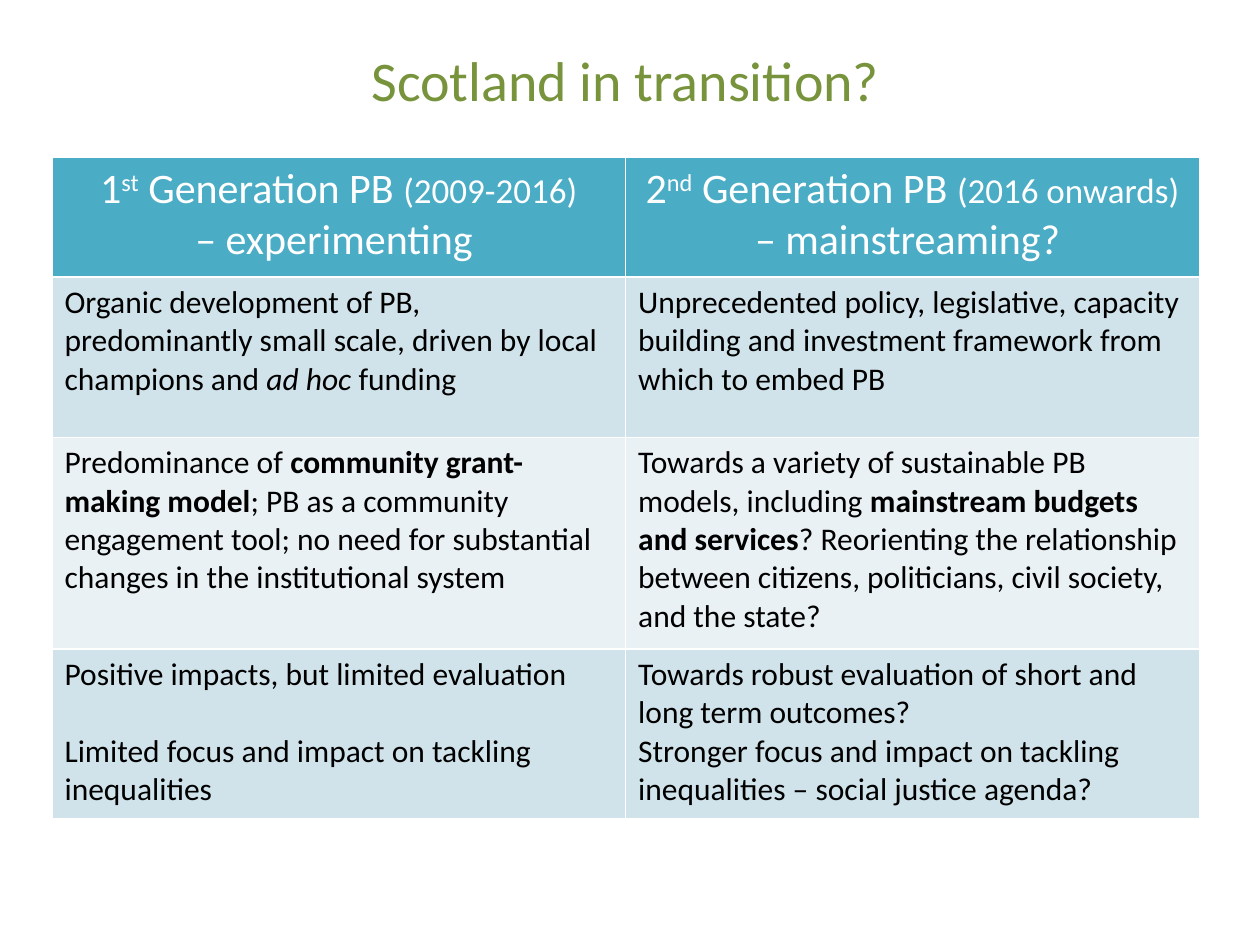
from lxml import etree
from pptx import Presentation
from pptx.dml.color import RGBColor
from pptx.enum import text
from pptx.oxml import ns
from pptx.util import Pt

GREEN = RGBColor(0x77, 0x93, 0x3C)
TEAL = RGBColor(0x4B, 0xAC, 0xC6)
BLUE_BAND = RGBColor(0xD0, 0xE3, 0xEA)
PALE_BAND = RGBColor(0xE9, 0xF1, 0xF5)
WHITE = RGBColor(0xFF, 0xFF, 0xFF)
BLACK = RGBColor(0, 0, 0)

FONT = "Calibri"
TITLE = "Scotland in transition?"
SUPER, SMALL, BOLD, ITALIC = "super", "small", "bold", "italic"

HEADERS = [
    [[("1",), ("st", SUPER), (" Generation PB ",), ("(2009-2016)", SMALL)],
     [("– experimenting ",)]],
    [[("2",), ("nd", SUPER), (" Generation PB ",), ("(2016 onwards)", SMALL)],
     [("– mainstreaming? ",)]],
]
BODY = [
    [
        [[("Organic development of PB, predominantly small scale, driven by local champions and ",),
          ("ad hoc ", ITALIC), ("funding",)]],
        [[("Unprecedented policy, legislative, capacity building and investment framework "
           "from which to embed PB",)]],
    ],
    [
        [[("Predominance of ",), ("community grant-making model", BOLD),
          ("; PB as a community engagement tool; no need for substantial changes "
           "in the institutional system",)]],
        [[("Towards a variety of sustainable PB models, including ",),
          ("mainstream budgets and services", BOLD),
          ("? Reorienting the relationship between citizens, politicians, civil society, "
           "and the state?",)]],
    ],
    [
        [[("Positive impacts, but limited evaluation",)],
         [("Limited focus and impact on tackling inequalities",)]],
        [[("Towards robust evaluation of short and long term outcomes?",)],
         [("Stronger focus and impact on tackling inequalities – social justice agenda?",)]],
    ],
]
ROW_HEIGHTS = [68.4, 91.5, 121, 97.2]
COLUMN_WIDTH = 327.8
TABLE_LEFT, TABLE_TOP = 29.7, 90
IMPACT_GAP = 22


def add_run(paragraph, words, size, color, style=None):
    run = paragraph.add_run()
    run.text = words
    font = run.font
    font.name = FONT
    font.size = Pt(20 if style == SMALL else size)
    font.color.rgb = color
    font.bold = style == BOLD
    font.italic = style == ITALIC
    if style == SUPER:
        run._r.get_or_add_rPr().set("baseline", "30000")


def add_borders(cell):
    properties = cell._tc.get_or_add_tcPr()
    for side in ("lnL", "lnR", "lnT", "lnB"):
        line = etree.SubElement(properties, ns.qn(f"a:{side}"), w=str(Pt(1)))
        fill = etree.SubElement(line, ns.qn("a:solidFill"))
        etree.SubElement(fill, ns.qn("a:srgbClr"), val=str(WHITE))


def fill_cell(cell, paragraphs, size, color, background, alignment):
    add_borders(cell)
    cell.fill.solid()
    cell.fill.fore_color.rgb = background
    frame = cell.text_frame
    for index, runs in enumerate(paragraphs):
        paragraph = frame.add_paragraph() if index else frame.paragraphs[0]
        paragraph.alignment = alignment
        for words, *style in runs:
            add_run(paragraph, words, size, color, *style)


def add_title(slide):
    box = slide.shapes.add_textbox(Pt(5.8), Pt(0), Pt(703.4), Pt(90))
    frame = box.text_frame
    frame.word_wrap = True
    frame.vertical_anchor = text.MSO_ANCHOR.MIDDLE
    paragraph = frame.paragraphs[0]
    paragraph.alignment = text.PP_ALIGN.CENTER
    add_run(paragraph, TITLE, 32, GREEN)


def add_comparison(slide):
    rows = [HEADERS] + BODY
    table = slide.shapes.add_table(
        len(rows), len(HEADERS), Pt(TABLE_LEFT), Pt(TABLE_TOP),
        Pt(COLUMN_WIDTH * len(HEADERS)), Pt(sum(ROW_HEIGHTS))).table
    for column in table.columns:
        column.width = Pt(COLUMN_WIDTH)
    for row_index, (cells, height) in enumerate(zip(rows, ROW_HEIGHTS)):
        table.rows[row_index].height = Pt(height)
        if row_index == 0:
            look = (24, WHITE, TEAL, text.PP_ALIGN.CENTER)
        else:
            band = BLUE_BAND if row_index % 2 else PALE_BAND
            look = (18, BLACK, band, text.PP_ALIGN.LEFT)
        for column_index, paragraphs in enumerate(cells):
            fill_cell(table.cell(row_index, column_index), paragraphs, *look)
    impacts = table.cell(len(rows) - 1, 0).text_frame
    impacts.paragraphs[1].space_before = Pt(IMPACT_GAP)


def main():
    presentation = Presentation()
    presentation.slide_width = Pt(720)
    presentation.slide_height = Pt(540)
    slide = presentation.slides.add_slide(presentation.slide_layouts[6])
    add_title(slide)
    add_comparison(slide)
    presentation.save("out.pptx")


if __name__ == "__main__":
    main()
